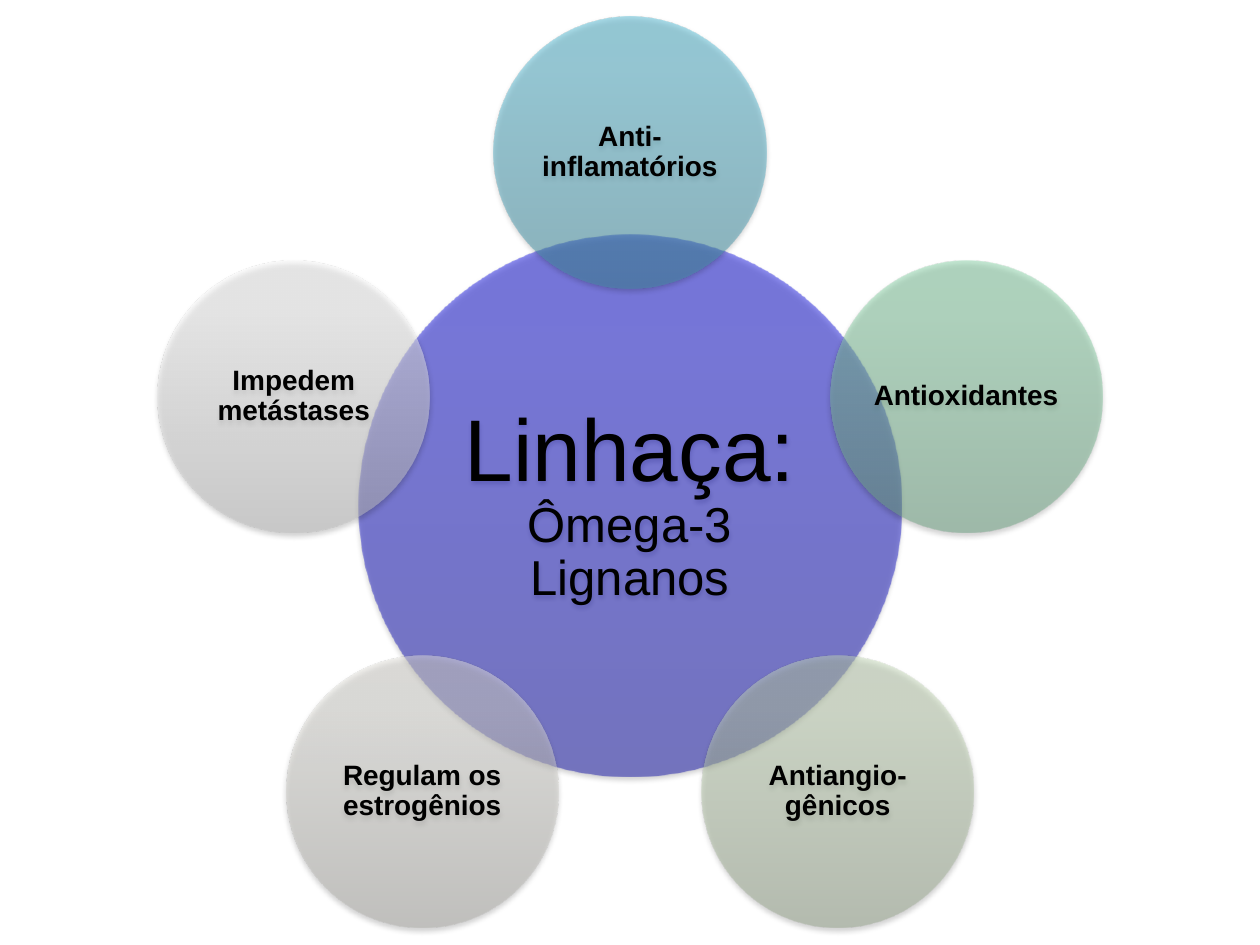
import math

from lxml import etree
from pptx import Presentation
from pptx.dml.color import RGBColor
from pptx.enum import shapes, text
from pptx.oxml.ns import qn
from pptx.util import Pt

BLACK = RGBColor(0x00, 0x00, 0x00)
FONT = "Arial"
OPACITY = 50

# Gradient stops run from the bottom of a circle (0 %) to its top (100 %).
STOPS = (0, 80, 100)
HUB = {
    "runs": [("Linhaça: ", 50), ("Ômega-3 Lignanos", 28)],
    "colors": ("1515A9", "1B1BDC", "1818E1"),
    "diameter": 310,
    "inset": 5,
    "bold": None,
}
# Clockwise from the top.
BENEFITS = [
    ("Anti-inflamatórios", ("438FA2", "57B9D2", "55BCD5")),
    ("Antioxidantes", ("6AA080", "8AD0A6", "8AD2A7")),
    ("Antiangio-gênicos", ("96A48C", "C3D5B6", "C3D7B7")),
    ("Regulam os estrogênios", ("AEADA8", "E2E1DB", "E3E2DB")),
    ("Impedem metástases", ("BEBEBE", "F7F7F7", "F8F8F8")),
]
CENTER_X, CENTER_Y = 360, 289
RING_RADIUS = 202
BENEFIT_DIAMETER = 155.5


def add_element(parent, tag, **attributes):
    element = etree.SubElement(parent, qn(tag))
    for name, value in attributes.items():
        element.set(name, str(value))
    return element


def add_color(parent, color, opacity):
    element = add_element(parent, "a:srgbClr", val=color)
    add_element(element, "a:alpha", val=opacity * 1000)


def style_circle(shape, colors):
    """Give the circle a translucent gradient, no line and a soft shadow."""
    properties = shape.element.spPr
    gradient = add_element(properties, "a:gradFill", rotWithShape=1)
    stop_list = add_element(gradient, "a:gsLst")
    for position, color in zip(STOPS, colors):
        stop = add_element(stop_list, "a:gs", pos=position * 1000)
        add_color(stop, color, OPACITY)
    add_element(gradient, "a:lin", ang=270 * 60000, scaled=0)
    shape.line.fill.background()
    effects = add_element(properties, "a:effectLst")
    shadow = add_element(effects, "a:outerShdw", blurRad=Pt(3.1), dist=Pt(1.8),
                         dir=90 * 60000, rotWithShape=0)
    add_color(shadow, "000000", 35)


def add_circle(slide, x, y, diameter, colors, runs, inset, bold):
    """Draw a captioned circle centred on x, y."""
    shape = slide.shapes.add_shape(
        shapes.MSO_SHAPE.OVAL, Pt(x - diameter / 2), Pt(y - diameter / 2),
        Pt(diameter), Pt(diameter))
    style_circle(shape, colors)

    frame = shape.text_frame
    frame.word_wrap = True
    frame.vertical_anchor = text.MSO_ANCHOR.MIDDLE
    for side in ("left", "top", "right", "bottom"):
        setattr(frame, f"margin_{side}", Pt(inset))
    paragraph = frame.paragraphs[0]
    paragraph.alignment = text.PP_ALIGN.CENTER
    paragraph.line_spacing = 0.9
    for words, size in runs:
        run = paragraph.add_run()
        run.text = words
        run.font.color.rgb = BLACK
        for name, value in {"name": FONT, "size": Pt(size), "bold": bold}.items():
            setattr(run.font, name, value)


def main():
    presentation = Presentation()
    presentation.slide_width, presentation.slide_height = Pt(720), Pt(540)
    slide = presentation.slides.add_slide(presentation.slide_layouts[6])

    add_circle(slide, CENTER_X, CENTER_Y, **HUB)
    for index, (caption, colors) in enumerate(BENEFITS):
        angle = math.tau * index / len(BENEFITS)
        add_circle(slide,
                   CENTER_X + RING_RADIUS * math.sin(angle),
                   CENTER_Y - RING_RADIUS * math.cos(angle),
                   BENEFIT_DIAMETER, colors, [(caption, 16)], inset=1.5, bold=True)

    presentation.save("out.pptx")


if __name__ == "__main__":
    main()
